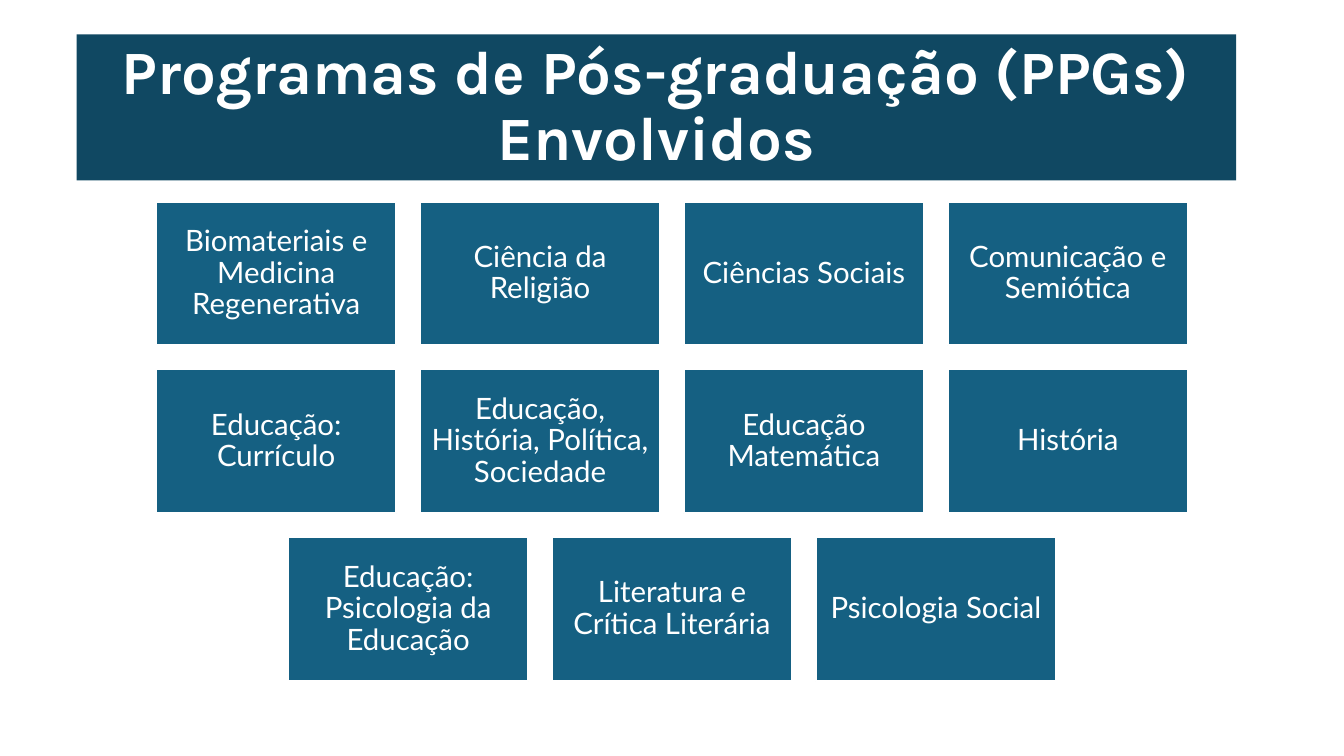
from dataclasses import dataclass

from pptx import Presentation
from pptx import util as u
from pptx.dml.color import RGBColor
from pptx.enum import shapes, text


@dataclass(frozen=True)
class Theme:
    banner: RGBColor = RGBColor.from_string("104862")
    card: RGBColor = RGBColor.from_string("156082")
    light: RGBColor = RGBColor.from_string("FFFFFF")
    title_font: str = "Karla"
    body_font: str = "Lato"
    title_size: int = 44
    body_size: int = 21
    outline: float = 1.5
    line_spacing: float = 0.9


@dataclass(frozen=True)
class Box:
    left: float
    top: float
    width: float
    height: float

    def inches(self):
        return [u.Inches(v) for v in (self.left, self.top, self.width, self.height)]


THEME = Theme()
TITLE_BOX = Box(0.76, 0.34, 11.5, 1.45)
CARDS_BOX = Box(1.55, 2.0, 10.23, 4.76)
COLUMNS = 4
GAP_SHARE = 0.1  # gap between cards, as a share of card width
ASPECT = 0.6     # card height, as a share of card width

TITLE = "Programas de Pós-graduação (PPGs) Envolvidos"
PROGRAMS = [
    "Biomateriais e Medicina Regenerativa",
    "Ciência da Religião",
    "Ciências Sociais",
    "Comunicação e Semiótica",
    "Educação: Currículo",
    "Educação, História, Política, Sociedade",
    "Educação Matemática",
    "História",
    "Educação: Psicologia da Educação",
    "Literatura e Crítica Literária",
    "Psicologia Social",
]


def write_centered(shape, words, font_name, size, bold=False):
    frame = shape.text_frame
    frame.text = words
    frame.word_wrap = True
    frame.auto_size = text.MSO_AUTO_SIZE.NONE
    frame.vertical_anchor = text.MSO_ANCHOR.MIDDLE
    paragraph = frame.paragraphs[0]
    paragraph.alignment = text.PP_ALIGN.CENTER
    paragraph.line_spacing = THEME.line_spacing
    font = paragraph.runs[0].font
    font.name, font.size, font.bold = font_name, u.Pt(size), bold
    font.color.rgb = THEME.light


def add_title(slide, box):
    title = slide.shapes.title
    title.left, title.top, title.width, title.height = box.inches()
    title.fill.solid()
    title.fill.fore_color.rgb = THEME.banner
    write_centered(title, TITLE, THEME.title_font, THEME.title_size, bold=True)


def add_card(slide, box, words):
    card = slide.shapes.add_shape(shapes.MSO_SHAPE.RECTANGLE, *box.inches())
    card.shadow.inherit = False
    card.fill.solid()
    card.fill.fore_color.rgb = THEME.card
    card.line.color.rgb = THEME.light
    card.line.width = u.Pt(THEME.outline)
    frame = card.text_frame
    frame.margin_left = frame.margin_right = u.Inches(0.09)
    frame.margin_top = frame.margin_bottom = u.Inches(0.09)
    write_centered(card, words, THEME.body_font, THEME.body_size)


def add_program_cards(slide, box):
    width = box.width / (COLUMNS + (COLUMNS - 1) * GAP_SHARE)
    height = width * ASPECT
    gap = width * GAP_SHARE
    for start in range(0, len(PROGRAMS), COLUMNS):
        row = PROGRAMS[start:start + COLUMNS]
        # A shorter row is centred in the box
        row_width = len(row) * (width + gap) - gap
        left = box.left + (box.width - row_width) / 2
        top = box.top + start // COLUMNS * (height + gap)
        for column, program in enumerate(row):
            add_card(slide, Box(left + column * (width + gap), top, width, height), program)


def main():
    presentation = Presentation()
    presentation.slide_width = u.Inches(13.33)
    presentation.slide_height = u.Inches(7.5)
    title_only = presentation.slide_layouts[5]
    slide = presentation.slides.add_slide(title_only)
    add_title(slide, TITLE_BOX)
    add_program_cards(slide, CARDS_BOX)
    presentation.save("out.pptx")


if __name__ == "__main__":
    main()
